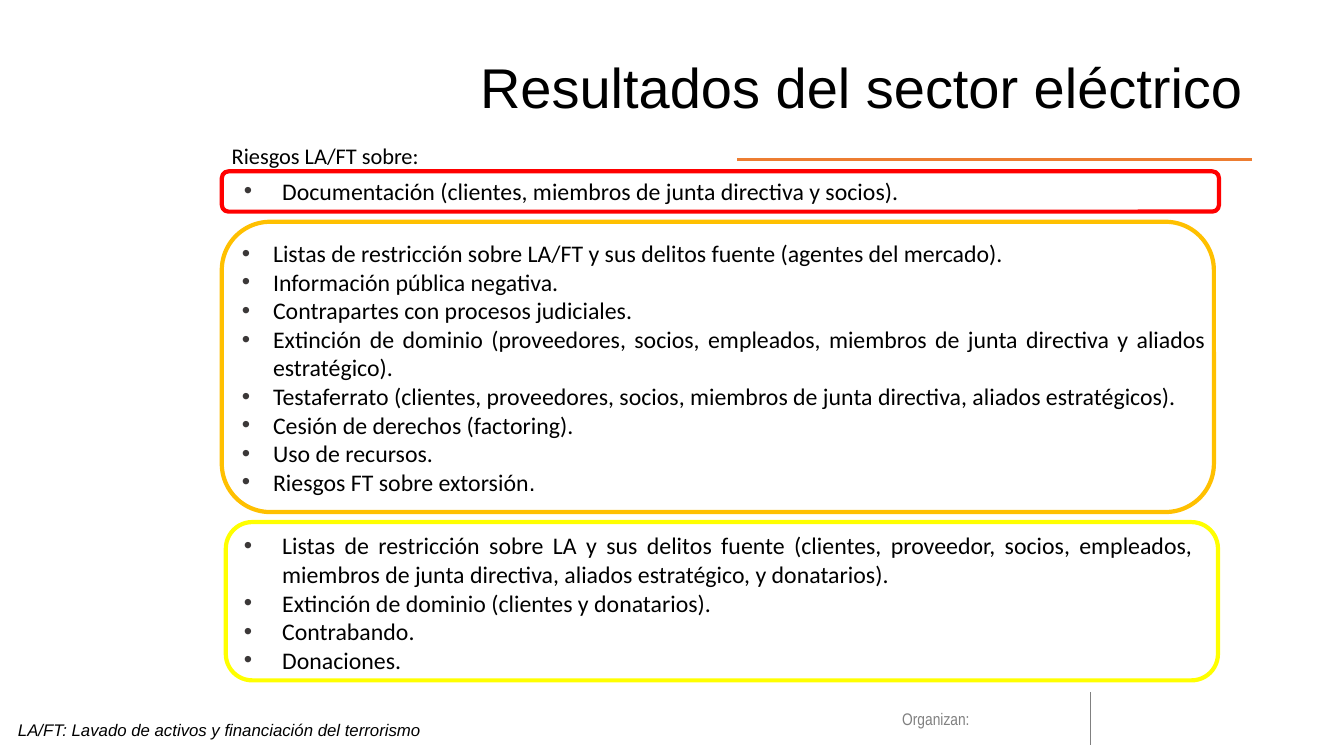
from lxml.etree import SubElement
from pptx import Presentation
from pptx.dml.color import RGBColor
from pptx.enum.shapes import MSO_CONNECTOR, MSO_SHAPE
from pptx.enum.text import MSO_ANCHOR, MSO_AUTO_SIZE, PP_ALIGN
from pptx.oxml.ns import qn
from pptx.util import Inches, Pt

TITLE = "Resultados del sector eléctrico"
# Risk groups: outline colour, frame box, text box, bullet indent, items
RISK_GROUPS = [
    ("FF0000", (2.2, 1.7, 9.89, 0.4), (2.32, 1.7, 8.03, 0.39), 0.38, [
        "Documentación (clientes, miembros de junta directiva y socios).",
    ]),
    ("FFC000", (2.2, 2.2, 9.84, 2.88), (2.3, 2.32, 9.76, 2.68), 0.31, [
        "Listas de restricción sobre LA/FT y sus delitos fuente (agentes del mercado).",
        "Información pública negativa.",
        "Contrapartes con procesos judiciales.",
        "Extinción de dominio (proveedores, socios, empleados, miembros de junta "
        "directiva y aliados estratégico).",
        "Testaferrato (clientes, proveedores, socios, miembros de junta directiva, "
        "aliados estratégicos).",
        "Cesión de derechos (factoring).",
        "Uso de recursos.",
        ("Riesgos FT sobre extorsión", "."),
    ]),
    ("FFFF00", (2.24, 5.18, 9.84, 1.57), (2.32, 5.22, 9.61, 1.53), 0.38, [
        "Listas de restricción sobre LA y sus delitos fuente (clientes, proveedor, "
        "socios, empleados, miembros de junta directiva, aliados estratégico, y donatarios).",
        "Extinción de dominio (clientes y donatarios).",
        "Contrabando.",
        "Donaciones.",
    ]),
]
# Labels: text, box, alignment, anchor, wrap, font
LABELS = [
    ("Riesgos LA/FT sobre:", (2.2, 1.36, 2.24, 0.37), PP_ALIGN.JUSTIFY,
     MSO_ANCHOR.MIDDLE, True, dict(name="Calibri", size=Pt(16))),
    ("Organizan:", (8.85, 6.98, 1.64, 0.3), PP_ALIGN.LEFT,
     MSO_ANCHOR.TOP, True, dict(name="Arial Narrow", size=Pt(12), color="808080")),
    ("LA/FT: Lavado de activos y financiación del terrorismo",
     (0.08, 7.09, 4.27, 0.3), PP_ALIGN.LEFT,
     MSO_ANCHOR.TOP, False, dict(name="Arial", size=Pt(12), italic=True)),
]
# Rules: start and end, colour, width
RULES = [
    ((7.31, 1.58, 12.42, 1.58), "ED7D31", 2.25),
    ((10.81, 6.87, 10.81, 7.39), "808080", 0.5),
]
BODY = dict(name="Calibri", size=Pt(17))


def rgb(value):
    return RGBColor.from_string(value)


def inches(values):
    return [Inches(v) for v in values]


def set_font(font, color="000000", **values):
    for key, value in values.items():
        setattr(font, key, value)
    font.color.rgb = rgb(color)


def add_text(box, anchor=MSO_ANCHOR.TOP, wrap=True):
    tf = s.shapes.add_textbox(*inches(box)).text_frame
    tf.word_wrap = wrap
    tf.auto_size = MSO_AUTO_SIZE.SHAPE_TO_FIT_TEXT
    tf.vertical_anchor = anchor
    return tf


def add_bullet(p, indent):
    pPr = p._p.get_or_add_pPr()
    pPr.set("marL", str(Inches(indent)))
    pPr.set("indent", str(-Inches(indent)))
    SubElement(SubElement(pPr, qn("a:buClr")), qn("a:srgbClr"), val="3B3838")
    SubElement(pPr, qn("a:buFont"), typeface="Arial")
    SubElement(pPr, qn("a:buChar"), char="•")


prs = Presentation()
prs.slide_width, prs.slide_height = Inches(13.33), Inches(7.5)
s = prs.slides.add_slide(prs.slide_layouts[5])

# Title
title = s.shapes.title
title.left, title.top, title.width, title.height = inches((3.56, 0.37, 8.86, 1.06))
tf = title.text_frame
tf.text = TITLE
tf.auto_size = MSO_AUTO_SIZE.NONE
tf.vertical_anchor = MSO_ANCHOR.MIDDLE
p = tf.paragraphs[0]
p.alignment, p.line_spacing = PP_ALIGN.RIGHT, 0.9
set_font(p.runs[0].font, name="Arial", size=Pt(40))

# Rules under the title and beside the footer
for ends, color, width in RULES:
    line = s.shapes.add_connector(MSO_CONNECTOR.STRAIGHT, *inches(ends))
    line.line.color.rgb = rgb(color)
    line.line.width = Pt(width)
    SubElement(line._element.spPr, qn("a:effectLst"))

# Labels
for text, box, align, anchor, wrap, font in LABELS:
    p = add_text(box, anchor, wrap).paragraphs[0]
    p.alignment = align
    r = p.add_run()
    r.text = text
    set_font(r.font, **font)

# Framed bullet lists
for color, frame_box, text_box, indent, items in RISK_GROUPS:
    frame = s.shapes.add_shape(MSO_SHAPE.ROUNDED_RECTANGLE, *inches(frame_box))
    frame.shadow.inherit = False
    frame.fill.background()
    frame.line.color.rgb = rgb(color)
    frame.line.width = Pt(3)

    tf = add_text(text_box)
    for i, item in enumerate(items):
        p = tf.paragraphs[0] if i == 0 else tf.add_paragraph()
        p.alignment = PP_ALIGN.JUSTIFY
        add_bullet(p, indent)
        parts = (item,) if isinstance(item, str) else item
        for part, face in zip(parts, ("Calibri", "Arial")):
            r = p.add_run()
            r.text = part
            set_font(r.font, **{**BODY, "name": face})

prs.save("out.pptx")
